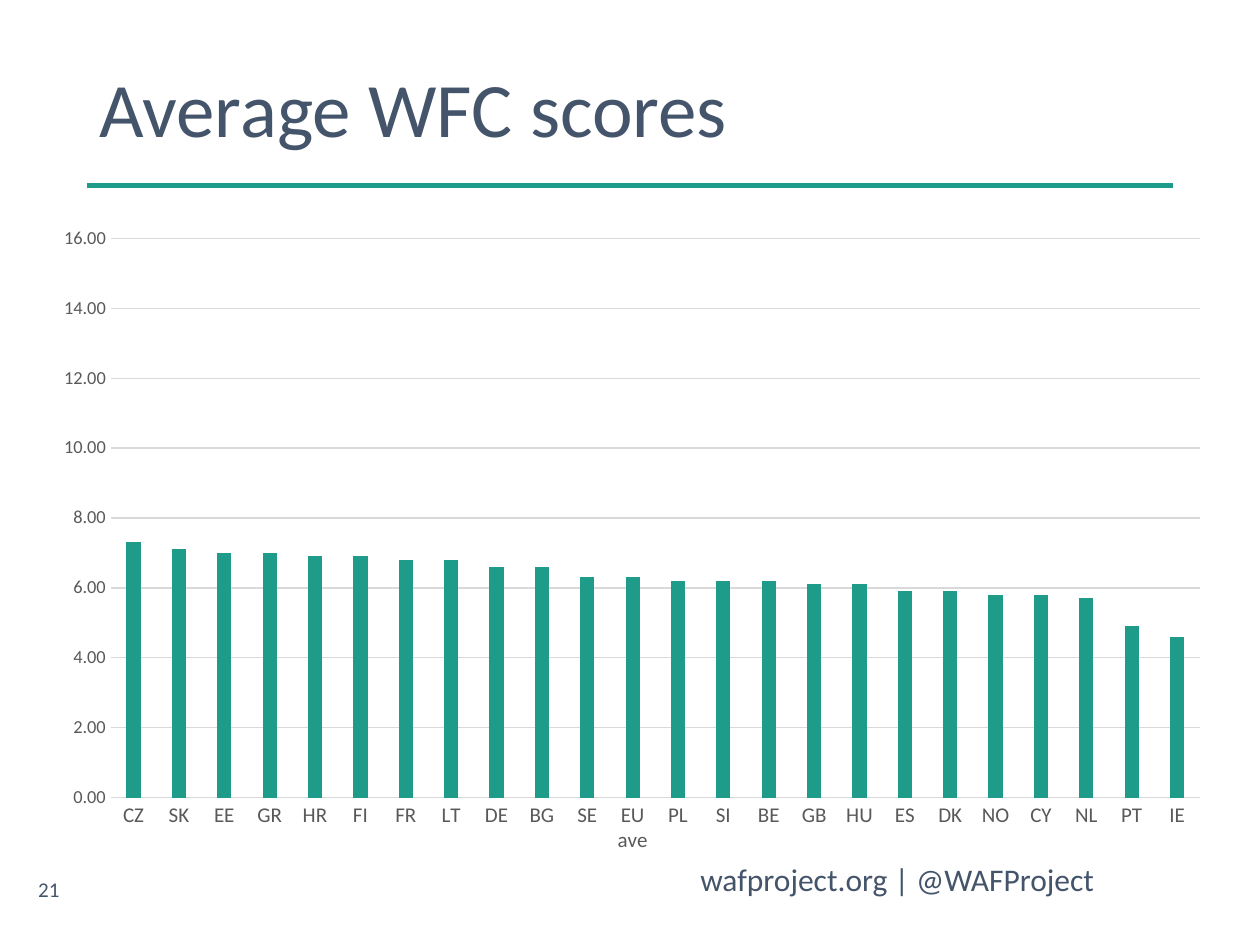
from dataclasses import dataclass

from lxml import etree
from pptx import Presentation
from pptx.chart.data import CategoryChartData
from pptx.dml.color import RGBColor
from pptx.enum.chart import XL_CHART_TYPE, XL_TICK_MARK
from pptx.enum.shapes import MSO_CONNECTOR
from pptx.enum.text import MSO_ANCHOR, PP_ALIGN
from pptx.oxml.ns import qn
from pptx.util import Inches, Pt

COLUMN = XL_CHART_TYPE.COLUMN_CLUSTERED
NO_TICK = XL_TICK_MARK.NONE
STRAIGHT = MSO_CONNECTOR.STRAIGHT
TOP, MIDDLE = MSO_ANCHOR.TOP, MSO_ANCHOR.MIDDLE
LEFT, RIGHT = PP_ALIGN.LEFT, PP_ALIGN.RIGHT


@dataclass(frozen=True)
class Theme:
    """Colours, font and type sizes of the slide."""
    font: str = "Calibri"
    ink: RGBColor = RGBColor(0x44, 0x54, 0x6A)
    accent: RGBColor = RGBColor(0x1E, 0x9C, 0x89)
    label: RGBColor = RGBColor(0x59, 0x59, 0x59)
    grid: RGBColor = RGBColor(0xD9, 0xD9, 0xD9)
    title: float = 44
    footer: float = 18
    small: float = 12
    value: float = 10.5
    rule: float = 3
    hairline: float = 0.75


THEME = Theme()

SCORES = {
    "CZ": 7.3, "SK": 7.1, "EE": 7.0, "GR": 7.0, "HR": 6.9, "FI": 6.9,
    "FR": 6.8, "LT": 6.8, "DE": 6.6, "BG": 6.6, "SE": 6.3, "EU ave": 6.3,
    "PL": 6.2, "SI": 6.2, "BE": 6.2, "GB": 6.1, "HU": 6.1, "ES": 5.9,
    "DK": 5.9, "NO": 5.8, "CY": 5.8, "NL": 5.7, "PT": 4.9, "IE": 4.6,
}


def style_font(font, size, color):
    """Apply the theme font with a size and colour."""
    font.name = THEME.font
    font.size = Pt(size)
    font.color.rgb = color


def write(sp, text, size, align=LEFT, anchor=TOP, spacing=None):
    """Fill a shape with one formatted paragraph."""
    tf = sp.text_frame
    tf.word_wrap = True
    tf.vertical_anchor = anchor
    p = tf.paragraphs[0]
    p.alignment = align
    p.line_spacing = spacing
    r = p.add_run()
    r.text = text
    style_font(r.font, size, THEME.ink)


def add_header(s, box, text):
    """Place the title and the rule below it."""
    x, y, w, h = box
    title = s.shapes.title
    title.left, title.top, title.width, title.height = box
    write(title, text, THEME.title, anchor=MIDDLE, spacing=0.9)
    rule_y = y + h + Inches(0.09)
    rule = s.shapes.add_connector(STRAIGHT, x, rule_y, x + w, rule_y)
    rule.line.color.rgb = THEME.accent
    rule.line.width = Pt(THEME.rule)
    etree.SubElement(rule._element.spPr, qn("a:effectLst"))


def add_score_chart(s, box, scores):
    """Draw the column chart of scores by country."""
    data = CategoryChartData(number_format="0.00")
    data.categories = list(scores)
    data.add_series("Series 1", list(scores.values()))
    chart = s.shapes.add_chart(COLUMN, *box, data).chart
    chart.has_legend = False
    chart.has_title = False
    style_font(chart.font, THEME.value, THEME.label)

    plot = chart.plots[0]
    plot.gap_width = 219
    plot.overlap = -27
    plot.vary_by_categories = False
    fill = plot.series[0].format.fill
    fill.solid()
    fill.fore_color.rgb = THEME.accent

    cat, val = chart.category_axis, chart.value_axis
    for axis, size in ((cat, THEME.small), (val, THEME.value)):
        axis.major_tick_mark = axis.minor_tick_mark = NO_TICK
        style_font(axis.tick_labels.font, size, THEME.label)
    val.minimum_scale, val.maximum_scale, val.major_unit = 0, 16, 2
    val.tick_labels.number_format = "0.00"
    val.tick_labels.number_format_is_linked = False
    val.format.line.fill.background()
    for line in (cat.format.line, val.major_gridlines.format.line):
        line.color.rgb = THEME.grid
        line.width = Pt(THEME.hairline)


def add_footer(s, box, text, number):
    """Place the page number and the project contact."""
    x, y, w, h = box
    contact_x = Inches(5.46)
    contact = s.shapes.add_textbox(contact_x, y, x + w - contact_x, h)
    write(contact, text, THEME.footer)
    page = s.shapes.add_textbox(x, y + Inches(0.08), Inches(0.43), h)
    write(page, number, THEME.small, align=RIGHT, anchor=MIDDLE)


def main():
    """Build and save the slide."""
    prs = Presentation()
    prs.slide_width, prs.slide_height = Inches(10), Inches(7.5)
    s = prs.slides.add_slide(prs.slide_layouts[5])
    add_header(s, (Inches(0.69), Inches(0.4), Inches(8.62), Inches(0.98)),
               "Average WFC scores")
    add_score_chart(s, (Inches(0.32), Inches(1.7), Inches(9.39), Inches(5.17)),
                    SCORES)
    add_footer(s, (Inches(0.14), Inches(6.78), Inches(9.72), Inches(0.4)),
               "wafproject.org | @WAFProject", "21")
    prs.save("out.pptx")


if __name__ == "__main__":
    main()
